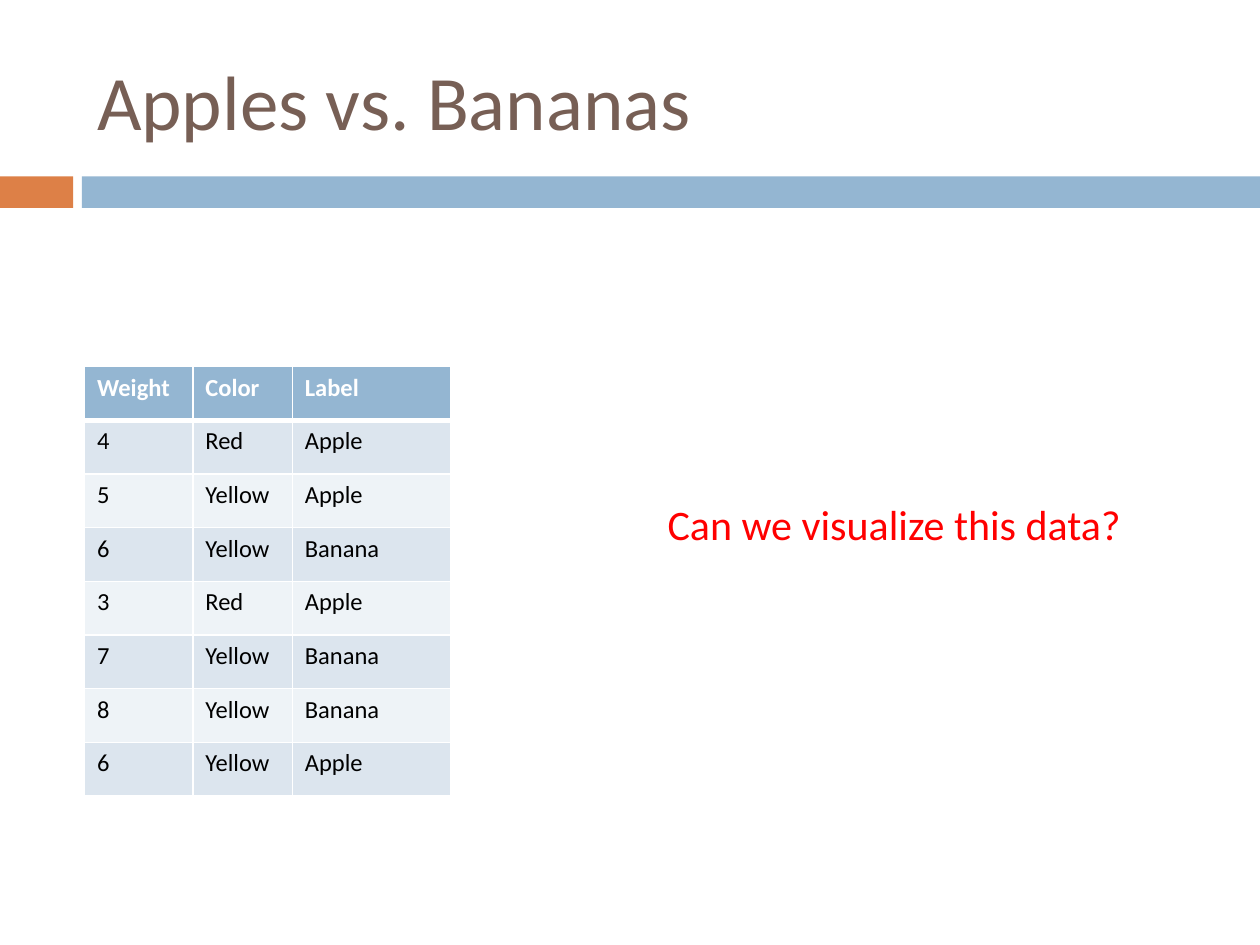
from lxml.etree import SubElement
from pptx import Presentation
from pptx.dml.color import RGBColor
from pptx.enum.shapes import MSO_SHAPE
from pptx.enum.text import MSO_ANCHOR, PP_ALIGN
from pptx.oxml.ns import qn
from pptx.util import Inches, Pt

COLORS = {
    "title": "775F55",
    "orange": "DD8047",
    "blue": "94B6D2",
    "dark band": "DCE5EE",
    "light band": "EEF3F7",
    "white": "FFFFFF",
    "black": "000000",
    "red": "FF0000",
}
FRUIT_ROWS = [
    ("Weight", "Color", "Label"),
    ("4", "Red", "Apple"),
    ("5", "Yellow", "Apple"),
    ("6", "Yellow", "Banana"),
    ("3", "Red", "Apple"),
    ("7", "Yellow", "Banana"),
    ("8", "Yellow", "Banana"),
    ("6", "Yellow", "Apple"),
]
COLUMN_WIDTHS = (0.86, 0.79, 1.26)


def color(name):
    return RGBColor.from_string(COLORS[name])


def write(frame, text, color_name, **formats):
    para = frame.paragraphs[0]
    para.alignment = PP_ALIGN.LEFT
    span = para.add_run()
    span.text = text
    span.font.color.rgb = color(color_name)
    for name, value in {"name": "Calibri", **formats}.items():
        setattr(span.font, name, value)


def place(shape, box):
    for name, value in zip(("left", "top", "width", "height"), box):
        setattr(shape, name, Inches(value))


def add_band(page, box):
    """Orange block and blue bar, separated by a narrow gap."""
    left, top, width, height = box
    block_width, gap = 0.58, 0.07
    bar_left = left + block_width + gap
    parts = [("orange", left, block_width), ("blue", bar_left, left + width - bar_left)]
    for name, part_left, part_width in parts:
        bar = page.shapes.add_shape(
            MSO_SHAPE.RECTANGLE,
            Inches(part_left), Inches(top), Inches(part_width), Inches(height))
        bar.shadow.inherit = False
        bar.fill.solid()
        bar.fill.fore_color.rgb = color(name)
        bar.line.fill.background()


def add_title(page, box):
    title = page.shapes.title
    place(title, box)
    title.text_frame.vertical_anchor = MSO_ANCHOR.MIDDLE
    write(title.text_frame, "Apples vs. Bananas", "title", size=Pt(44))


def set_borders(cell, widths):
    """Draw white borders; they must precede the fill in the cell XML."""
    properties = cell._tc.get_or_add_tcPr()
    for side, width in widths.items():
        line = SubElement(properties, qn(f"a:ln{side}"), w=str(Pt(width)))
        fill = SubElement(line, qn("a:solidFill"))
        SubElement(fill, qn("a:srgbClr"), val=COLORS["white"])


def add_fruit_table(page, box):
    frame = page.shapes.add_table(
        len(FRUIT_ROWS), len(COLUMN_WIDTHS), *(Inches(value) for value in box))
    table = frame.table
    for column, width in zip(table.columns, COLUMN_WIDTHS):
        column.width = Inches(width)
    for row_index, values in enumerate(FRUIT_ROWS):
        header = row_index == 0
        band = "blue" if header else "dark band" if row_index % 2 else "light band"
        top_width = 3 if row_index == 1 else 1
        bottom_width = 3 if header else 1
        for column_index, value in enumerate(values):
            cell = table.cell(row_index, column_index)
            set_borders(cell, {"L": 1, "R": 1, "T": top_width, "B": bottom_width})
            cell.fill.solid()
            cell.fill.fore_color.rgb = color(band)
            write(cell.text_frame, value, "white" if header else "black",
                  size=Pt(14), bold=header)


def add_question(page, box):
    question = page.shapes.add_textbox(*(Inches(value) for value in box))
    question.text_frame.word_wrap = False
    write(question.text_frame, "Can we visualize this data?", "red", size=Pt(24))


def main():
    deck = Presentation()
    deck.slide_width, deck.slide_height = Inches(10), Inches(7.5)
    page = deck.slides.add_slide(deck.slide_layouts[5])

    # Heading
    add_band(page, (0, 1.4, 10, 0.25))
    add_title(page, (0.67, 0.25, 8.92, 1.08))

    # Data and question
    add_fruit_table(page, (0.67, 2.91, 2.91, 3.41))
    add_question(page, (5.2, 3.91, 3.83, 0.5))

    deck.save("out.pptx")


if __name__ == "__main__":
    main()
